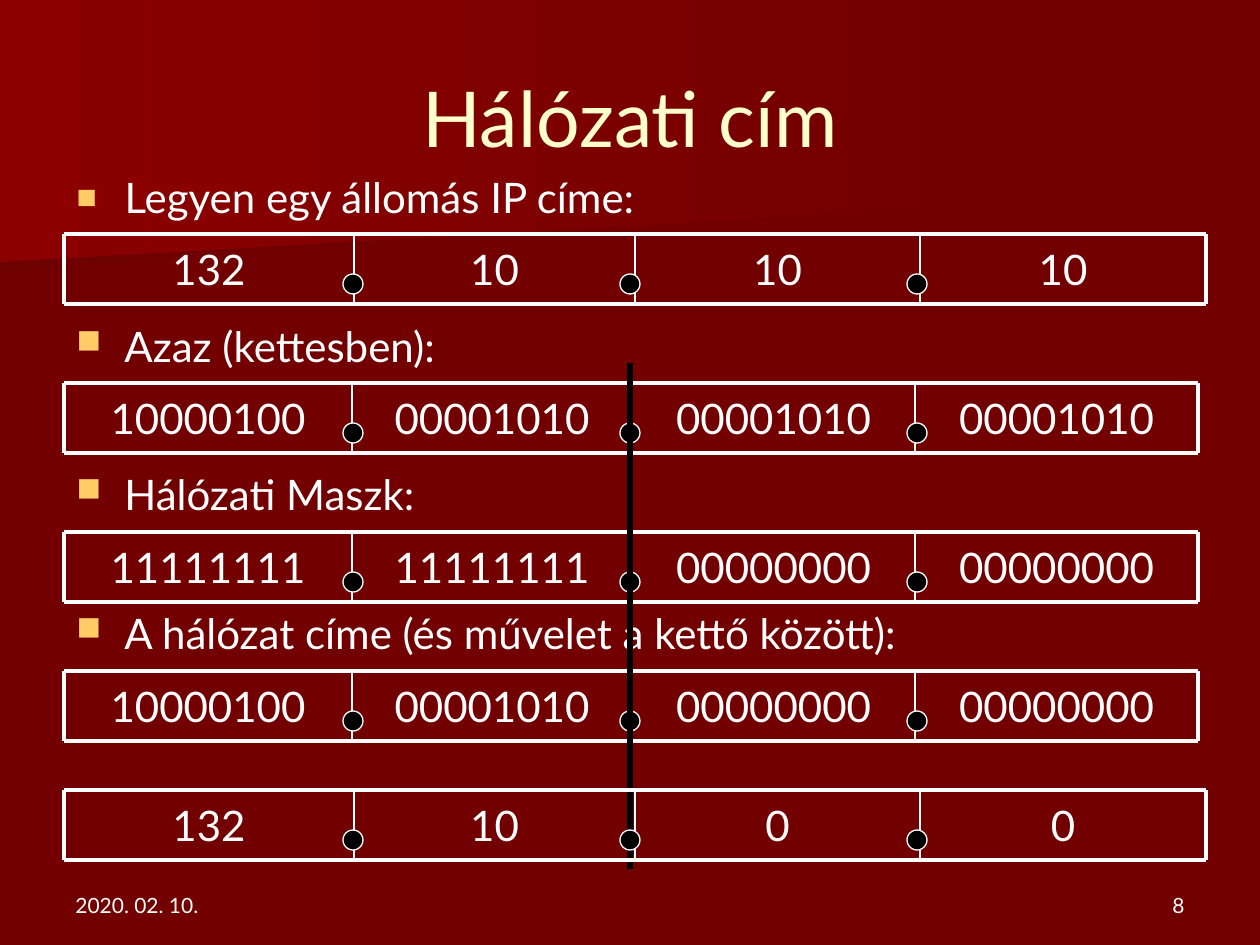
"""Builds the slide that derives a network address from an IP address and a mask."""
from itertools import pairwise

from lxml import etree
from pptx import Presentation
from pptx import util as u
from pptx.dml.color import RGBColor
from pptx.enum import shapes, text
from pptx.oxml.ns import qn

SCALE = 914400 / 126
FONT = "Lato"
WHITE, BLACK, CREAM, GOLD, DARK_RED = "FFFFFF", "000000", "FFFFCC", "FFCC66", "720000"
ROW_LEFT, ROW_HEIGHT = 64, 70
DECIMAL_EDGES = (ROW_LEFT, 354, 635, 920, 1206)
BINARY_EDGES = (ROW_LEFT, 352, 632, 915, 1198)
DOT_CENTRES, DOT_SIZE, DOT_OFFSET = (353, 630, 917), 20, 40


def px(length):
    """Turn a length in pixels into EMU."""
    return u.Emu(round(length * SCALE))


def colour(value):
    """Turn a hex string into a colour."""
    return RGBColor.from_string(value)


def write(shape, words, size=24, ink=WHITE, align=text.PP_ALIGN.LEFT,
          anchor=text.MSO_ANCHOR.TOP, space=0):
    """Put one formatted paragraph into a shape and return the paragraph."""
    frame = shape.text_frame
    frame.text = words
    frame.word_wrap = True
    frame.auto_size = text.MSO_AUTO_SIZE.NONE
    frame.vertical_anchor = anchor
    paragraph = frame.paragraphs[0]
    paragraph.alignment = align
    paragraph.space_before = u.Pt(space)
    for run in paragraph.runs:
        run.font.name = FONT
        run.font.size = u.Pt(size)
        run.font.color.rgb = colour(ink)
    return paragraph


def place(shape, left, top, width, height):
    """Move a placeholder and set its size."""
    shape.left, shape.top, shape.width, shape.height = map(px, (left, top, width, height))


def add_text(parent, left, top, width, height):
    """Add an empty text box."""
    return parent.shapes.add_textbox(px(left), px(top), px(width), px(height))


def write_bullet(shape, words):
    """Write a list item with a small gold square."""
    paragraph = write(shape, words, space=4.8)
    properties = paragraph._p.get_or_add_pPr()
    properties.set("marL", str(px(48)))
    properties.set("indent", str(px(-48)))
    bullet_colour = etree.SubElement(properties, qn("a:buClr"))
    etree.SubElement(bullet_colour, qn("a:srgbClr"), val=GOLD)
    etree.SubElement(properties, qn("a:buSzPct"), val="80000")
    etree.SubElement(properties, qn("a:buChar"), char="■")


def add_line(parent, start, end, ink, weight):
    """Add a straight line without a shadow."""
    line = parent.shapes.add_connector(
        shapes.MSO_CONNECTOR.STRAIGHT, *map(px, (*start, *end)))
    line.line.color.rgb = colour(ink)
    line.line.width = u.Pt(weight)
    etree.SubElement(line._element.spPr, qn("a:effectLst"))


def add_dot(parent, centre, top):
    """Add the round separator between two octets."""
    dot = parent.shapes.add_shape(
        shapes.MSO_SHAPE.OVAL, px(centre - DOT_SIZE / 2), px(top), px(DOT_SIZE), px(DOT_SIZE))
    dot.shadow.inherit = False
    dot.fill.solid()
    dot.fill.fore_color.rgb = colour(BLACK)
    dot.line.color.rgb = colour(WHITE)
    dot.line.width = u.Pt(0.75)


def add_address(slide, top, edges, address):
    """Add a framed row of four octets with dots between them."""
    group = slide.shapes.add_group_shape()
    bottom = top + ROW_HEIGHT
    for (left, right), octet in zip(pairwise(edges), address.split(".")):
        cell = add_text(group, left, top, right - left, ROW_HEIGHT)
        write(cell, octet, align=text.PP_ALIGN.CENTER,
              anchor=text.MSO_ANCHOR.MIDDLE, space=4.8)
    for level in (top, bottom):
        add_line(group, (edges[0], level), (edges[-1], level), WHITE, 2.25)
    for edge in edges:
        weight = 2.25 if edge in (edges[0], edges[-1]) else 1
        add_line(group, (edge, top), (edge, bottom), WHITE, weight)
    for centre in DOT_CENTRES:
        add_dot(group, centre, top + DOT_OFFSET)


def add_backdrop(slide, depth, points, start_colour):
    """Add a background shape that fades to the slide colour, at a given depth."""
    builder = slide.shapes.build_freeform(*points[0], scale=SCALE)
    builder.add_line_segments(points[1:], close=True)
    backdrop = builder.convert_to_shape()
    backdrop.shadow.inherit = False
    backdrop.line.fill.background()
    backdrop.fill.gradient()
    backdrop.fill.gradient_angle = 0
    for stop, value in zip(backdrop.fill.gradient_stops, (start_colour, DARK_RED)):
        stop.color.rgb = colour(value)
    slide.shapes._spTree.insert(2 + depth, backdrop._element)


def main():
    """Build and save the slide."""
    presentation = Presentation()
    presentation.slide_width, presentation.slide_height = px(1260), px(945)
    slide = presentation.slides.add_slide(presentation.slide_layouts[1])
    slide.background.fill.solid()
    slide.background.fill.fore_color.rgb = colour(DARK_RED)
    add_backdrop(slide, 0, [(980, 193), (0, 273), (0, 127), (982, 127), (980, 161)], "6F0000")
    add_backdrop(slide, 1, [(998, 204), (0, 262), (0, 0), (998, 0)], "8C0000")

    title, body = slide.placeholders
    place(title, 63, 38, 1134, 157)
    write(title, "Hálózati cím", 44, CREAM, text.PP_ALIGN.CENTER, text.MSO_ANCHOR.MIDDLE)
    place(body, ROW_LEFT, 165, 1123, 93)
    write_bullet(body, "Legyen egy állomás IP címe:")
    for top, words in (
        (314, "Azaz (kettesben):"),
        (462, "Hálózati Maszk:"),
        (601, "A hálózat címe (és művelet a kettő között):"),
    ):
        write_bullet(add_text(slide, ROW_LEFT, top, 1134, 79), words)

    add_address(slide, 234, DECIMAL_EDGES, "132.10.10.10")
    for top, address in (
        (383, "10000100.00001010.00001010.00001010"),
        (532, "11111111.11111111.00000000.00000000"),
        (671, "10000100.00001010.00000000.00000000"),
    ):
        add_address(slide, top, BINARY_EDGES, address)
    add_line(slide, (630, 363), (630, 869), BLACK, 3)
    add_address(slide, 790, DECIMAL_EDGES, "132.10.0.0")

    for left, words, align in (
        (63, "2020. 02. 10.", text.PP_ALIGN.LEFT),
        (903, "8", text.PP_ALIGN.RIGHT),
    ):
        footer = add_text(slide, left, 861, 294, 63)
        write(footer, words, 12, align=align, anchor=text.MSO_ANCHOR.BOTTOM)
    presentation.save("out.pptx")


if __name__ == "__main__":
    main()
